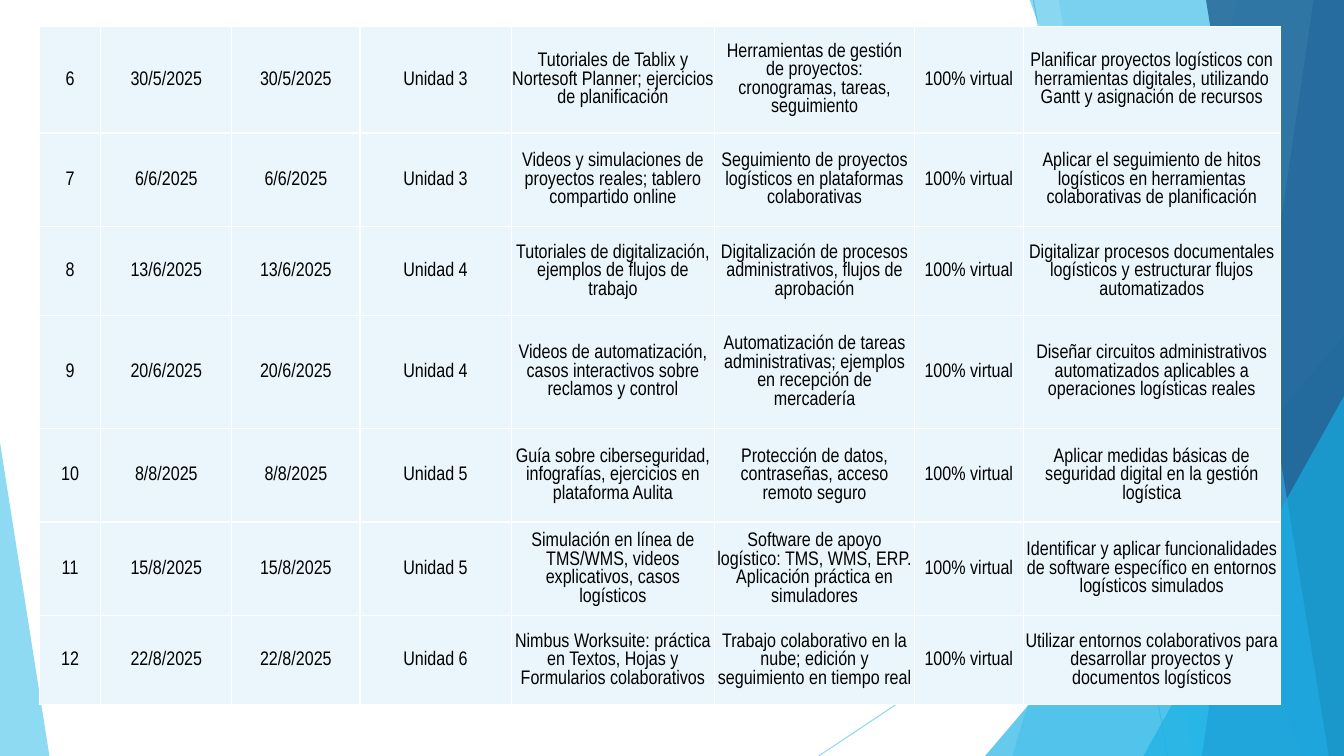
from typing import NamedTuple

from lxml import etree
from pptx import Presentation
from pptx.dml.color import RGBColor
from pptx.enum.shapes import MSO_CONNECTOR, MSO_SHAPE
from pptx.enum.text import MSO_ANCHOR, PP_ALIGN
from pptx.oxml.ns import qn
from pptx.util import Inches, Pt

LINE = MSO_CONNECTOR.STRAIGHT
WEDGE = MSO_SHAPE.ISOSCELES_TRIANGLE
MIDDLE = MSO_ANCHOR.MIDDLE
CENTER = PP_ALIGN.CENTER

HUES = {
    "sky": "5FCBEF",
    "cyan": "17B0E4",
    "blue": "2E83C3",
    "navy": "226292",
    "cell": "EAF6FC",
    "rule": "FFFFFF",
    "text": "000000",
}
FONT = "Arial Narrow"
WIDE, HIGH = 13.33, 7.5
TOP = -0.01


class Ray(NamedTuple):
    x1: float
    y1: float
    x2: float
    y2: float


class Band(NamedTuple):
    """Panel against the right edge, with a slanted left side."""
    top: float
    foot: float
    hue: str
    alpha: int


class Peak(NamedTuple):
    """Triangle standing on the bottom edge."""
    left: float
    top: float
    width: float
    tip: float
    hue: str
    alpha: int


class Week(NamedTuple):
    num: int
    date: str
    unit: int
    media: str
    topic: str
    goal: str


RAYS = [Ray(10.25, 0, 11.58, HIGH), Ray(WIDE, 4.03, 8.12, HIGH)]

# Back to front
DECOR = [
    Band(12.28, 10.04, "sky", 36),
    Band(10.5, 11.83, "sky", 20),
    Peak(9.77, 3.33, 3.56, 1, "cyan", 66),
    Band(10.21, 12.91, "cyan", 50),
    Band(13.03, 11.92, "blue", 70),
    Band(11.96, 13.18, "navy", 80),
    Peak(11.34, 3.93, 1.99, 1, "cyan", 66),
    Peak(0, 4.39, 0.49, 0, "sky", 70),
]

COLS = [0.61, 1.3, 1.27, 1.5, 2.02, 1.98, 1.08, 2.55]
ROWS = [1.06, 0.93, 0.88, 1.12, 0.93, 0.93, 0.88]
WEEKS = [
    Week(6, "30/5/2025", 3,
         "Tutoriales de Tablix y Nortesoft Planner; ejercicios de planificación",
         "Herramientas de gestión de proyectos: cronogramas, tareas, seguimiento",
         "Planificar proyectos logísticos con herramientas digitales, "
         "utilizando Gantt y asignación de recursos"),
    Week(7, "6/6/2025", 3,
         "Videos y simulaciones de proyectos reales; tablero compartido online",
         "Seguimiento de proyectos logísticos en plataformas colaborativas",
         "Aplicar el seguimiento de hitos logísticos en herramientas "
         "colaborativas de planificación"),
    Week(8, "13/6/2025", 4,
         "Tutoriales de digitalización, ejemplos de flujos de trabajo",
         "Digitalización de procesos administrativos, flujos de aprobación",
         "Digitalizar procesos documentales logísticos y estructurar flujos "
         "automatizados"),
    Week(9, "20/6/2025", 4,
         "Videos de automatización, casos interactivos sobre reclamos y control",
         "Automatización de tareas administrativas; ejemplos en recepción de "
         "mercadería",
         "Diseñar circuitos administrativos automatizados aplicables a "
         "operaciones logísticas reales"),
    Week(10, "8/8/2025", 5,
         "Guía sobre ciberseguridad, infografías, ejercicios en plataforma Aulita",
         "Protección de datos, contraseñas, acceso remoto seguro",
         "Aplicar medidas básicas de seguridad digital en la gestión logística"),
    Week(11, "15/8/2025", 5,
         "Simulación en línea de TMS/WMS, videos explicativos, casos logísticos",
         "Software de apoyo logístico: TMS, WMS, ERP. Aplicación práctica en "
         "simuladores",
         "Identificar y aplicar funcionalidades de software específico en "
         "entornos logísticos simulados"),
    Week(12, "22/8/2025", 6,
         "Nimbus Worksuite: práctica en Textos, Hojas y Formularios colaborativos",
         "Trabajo colaborativo en la nube; edición y seguimiento en tiempo real",
         "Utilizar entornos colaborativos para desarrollar proyectos y "
         "documentos logísticos"),
]


def color(hue: str) -> RGBColor:
    return RGBColor.from_string(HUES[hue])


def fade(node, alpha: int) -> None:
    """Set the opacity, in percent, of the first colour under node."""
    tint = node.find(".//" + qn("a:srgbClr"))
    etree.SubElement(tint, qn("a:alpha"), val=str(alpha * 1000))


def add_ray(slide, ray: Ray) -> None:
    line = slide.shapes.add_connector(LINE, *map(Inches, ray))
    line.line.color.rgb = color("sky")
    line.line.width = Pt(0.75)
    props = line._element.spPr
    fade(props, 70)
    etree.SubElement(props, qn("a:effectLst"))


def add_decor(slide, part: Band | Peak) -> None:
    if isinstance(part, Band):
        form = slide.shapes.build_freeform(
            Inches(part.top), Inches(TOP))
        ends = [(WIDE, TOP), (WIDE, HIGH), (part.foot, HIGH)]
        form.add_line_segments([(Inches(x), Inches(y)) for x, y in ends])
        shape = form.convert_to_shape()
    else:
        box = (part.left, part.top, part.width, HIGH - part.top)
        shape = slide.shapes.add_shape(WEDGE, *map(Inches, box))
        shape.adjustments[0] = part.tip
    shape.shadow.inherit = False
    shape.fill.solid()
    shape.fill.fore_color.rgb = color(part.hue)
    shape.line.fill.background()
    fade(shape._element.spPr, part.alpha)


def add_rules(cell) -> None:
    """Draw the four borders, which come before the fill in the XML."""
    props = cell._tc.get_or_add_tcPr()
    for spot, side in enumerate(("a:lnL", "a:lnR", "a:lnT", "a:lnB")):
        rule = etree.Element(qn(side), w=str(Pt(1)))
        fill = etree.SubElement(rule, qn("a:solidFill"))
        etree.SubElement(fill, qn("a:srgbClr"), val=HUES["rule"])
        props.insert(spot, rule)


def fill_cell(cell, text: str) -> None:
    cell.fill.solid()
    cell.fill.fore_color.rgb = color("cell")
    cell.vertical_anchor = MIDDLE
    cell.margin_left = cell.margin_right = cell.margin_top = Inches(0.01)
    cell.margin_bottom = 0
    para = cell.text_frame.paragraphs[0]
    para.alignment = CENTER
    run = para.add_run()
    run.text = text
    run.font.name = FONT
    run.font.size = Pt(14)
    run.font.color.rgb = color("text")
    add_rules(cell)


def add_plan(slide) -> None:
    box = map(Inches, (0.39, 0.26, sum(COLS), sum(ROWS)))
    table = slide.shapes.add_table(len(ROWS), len(COLS), *box).table
    table.first_row = table.horz_banding = False
    for col, width in zip(table.columns, COLS):
        col.width = Inches(width)
    for row, height, week in zip(table.rows, ROWS, WEEKS):
        row.height = Inches(height)
        texts = (str(week.num), week.date, week.date, f"Unidad {week.unit}",
                 week.media, week.topic, "100% virtual", week.goal)
        for cell, text in zip(row.cells, texts):
            fill_cell(cell, text)


def main() -> None:
    deck = Presentation()
    deck.slide_width, deck.slide_height = Inches(WIDE), Inches(HIGH)
    slide = deck.slides.add_slide(deck.slide_layouts[6])
    # Background
    for ray in RAYS:
        add_ray(slide, ray)
    for part in DECOR:
        add_decor(slide, part)
    # Weekly plan
    add_plan(slide)
    deck.save("out.pptx")


if __name__ == "__main__":
    main()
